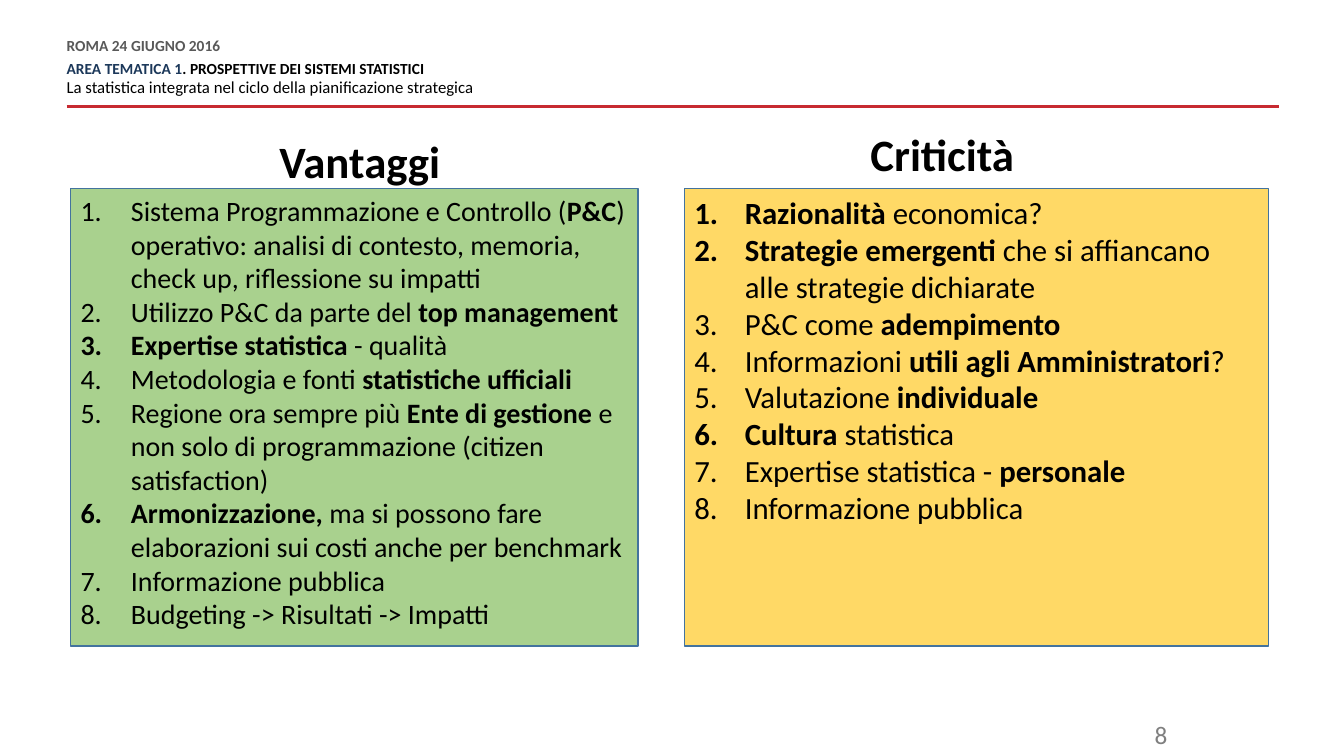
from dataclasses import dataclass

from lxml.etree import SubElement as Sub
from pptx import Presentation
from pptx.dml.color import RGBColor as Rgb
from pptx.enum.shapes import MSO_CONNECTOR as Link, MSO_SHAPE as Kind
from pptx.enum.text import MSO_ANCHOR as Anchor, PP_ALIGN as Align
from pptx.oxml.ns import qn
from pptx.util import Cm, Pt


@dataclass(frozen=True)
class Theme:
    font: str = "Calibri"
    black: str = "000000"
    grey: str = "595959"
    pale: str = "7F7F7F"
    navy: str = "1C385A"
    red: str = "C72A31"
    green: str = "A9D18E"
    gold: str = "FFD966"
    edge: str = "43739E"
    small: int = 11
    note: int = 12
    page: int = 18
    title: int = 32


PROS = [
    "Sistema Programmazione e Controllo (**P&C**) operativo: analisi di contesto, "
    "memoria, check up, riflessione su impatti",
    "Utilizzo P&C da parte del **top management**",
    "**Expertise statistica **- qualità",
    "Metodologia e fonti **statistiche ufficiali**",
    "Regione ora sempre più **Ente di gestione **e non solo di programmazione "
    "(citizen satisfaction)",
    "**Armonizzazione,** ma si possono fare elaborazioni sui costi anche per benchmark",
    "Informazione pubblica",
    "Budgeting -> Risultati -> Impatti",
]
CONS = [
    "**Razionalità** economica?",
    "**Strategie emergenti **che si affiancano alle strategie dichiarate",
    "P&C come **adempimento**",
    "Informazioni **utili agli Amministratori**?",
    "Valutazione **individuale**",
    "**Cultura** statistica",
    "Expertise statistica - **personale**",
    "Informazione pubblica",
]


def write(para, text, font=Theme.font, size=Theme.small, color=Theme.black):
    """Add text to a paragraph; parts between ** marks are bold."""
    for i, part in enumerate(text.split("**")):
        if part:
            run = para.add_run()
            run.text = part
            run.font.name = font
            run.font.size = Pt(size)
            run.font.bold = i % 2 == 1
            run.font.color.rgb = Rgb.from_string(color)


def number(para):
    """Give a paragraph a hanging automatic number."""
    props = para._p.get_or_add_pPr()
    props.set("marL", str(Cm(1.27)))
    props.set("indent", str(-Cm(1.27)))
    Sub(props, qn("a:buFont"), typeface="+mj-lt")
    Sub(props, qn("a:buAutoNum"), type="arabicPeriod")


class Page:
    def __init__(self, slide, theme):
        self.shapes = slide.shapes
        self.theme = theme

    def frame(self, x, y, w, h, inset=True, anchor=Anchor.TOP):
        box = self.shapes.add_textbox(Cm(x), Cm(y), Cm(w), Cm(h))
        text = box.text_frame
        text.word_wrap = True
        text.vertical_anchor = anchor
        if not inset:
            text.margin_left = text.margin_right = 0
            text.margin_top = text.margin_bottom = 0
        return text

    def rule(self, x, y, end):
        line = self.shapes.add_connector(Link.STRAIGHT, Cm(x), Cm(y), Cm(end), Cm(y))
        line.line.color.rgb = Rgb.from_string(self.theme.red)
        line.line.width = Pt(2)
        Sub(line._element.spPr, qn("a:effectLst"))

    def header(self, x, y, w, h):
        style = self.theme
        text = self.frame(x, y, w, h, inset=False)
        date, area, topic = text.paragraphs[0], text.add_paragraph(), text.add_paragraph()
        for para in text.paragraphs:
            para.line_spacing = Pt(10.8)
        date.space_after = topic.space_after = Pt(6)
        topic.space_before = Pt(3)
        write(date, "**ROMA 24 GIUGNO 2016**", color=style.grey)
        write(area, "**AREA TEMATICA 1**", color=style.navy)
        write(area, "**. PROSPETTIVE DEI SISTEMI STATISTICI**")
        write(topic, "La statistica integrata nel ciclo della pianificazione strategica",
              size=style.note)

    def title(self, text, x, y, anchor):
        para = self.frame(x, y, 9.86, 1.45, inset=False, anchor=anchor).paragraphs[0]
        para.alignment = Align.CENTER
        para.line_spacing = 0.9
        write(para, f"**{text}**", size=self.theme.title)

    def panel(self, items, x, w, fill, size):
        box = self.shapes.add_shape(Kind.RECTANGLE, Cm(x), Cm(4.75), Cm(w), Cm(11.53))
        box.shadow.inherit = False
        box.fill.solid()
        box.fill.fore_color.rgb = Rgb.from_string(fill)
        box.line.color.rgb = Rgb.from_string(self.theme.edge)
        box.line.width = Pt(0)
        text = box.text_frame
        text.word_wrap = True
        text.vertical_anchor = Anchor.TOP
        for i, item in enumerate(items):
            para = text.add_paragraph() if i else text.paragraphs[0]
            number(para)
            para.alignment = Align.LEFT
            write(para, item, size=size)

    def folio(self, text, x, y, w, h):
        para = self.frame(x, y, w, h).paragraphs[0]
        para.alignment = Align.RIGHT
        write(para, text, size=self.theme.page, color=self.theme.pale)


def main():
    deck = Presentation()
    deck.slide_width, deck.slide_height = Cm(33.87), Cm(19.05)
    theme = Theme()
    page = Page(deck.slides.add_slide(deck.slide_layouts[6]), theme)
    page.rule(1.68, 2.69, 32.23)
    page.header(1.68, 0.99, 21.18, 1.5)
    page.folio("8", 26.67, 18.01, 3, 0.89)
    page.title("Vantaggi", 4.14, 3.3, Anchor.BOTTOM)
    page.panel(PROS, 1.78, 14.3, theme.green, 20)
    page.panel(CONS, 17.25, 14.71, theme.gold, 22)
    page.title("Criticità", 18.82, 3.35, Anchor.TOP)
    deck.save("out.pptx")


if __name__ == "__main__":
    main()
